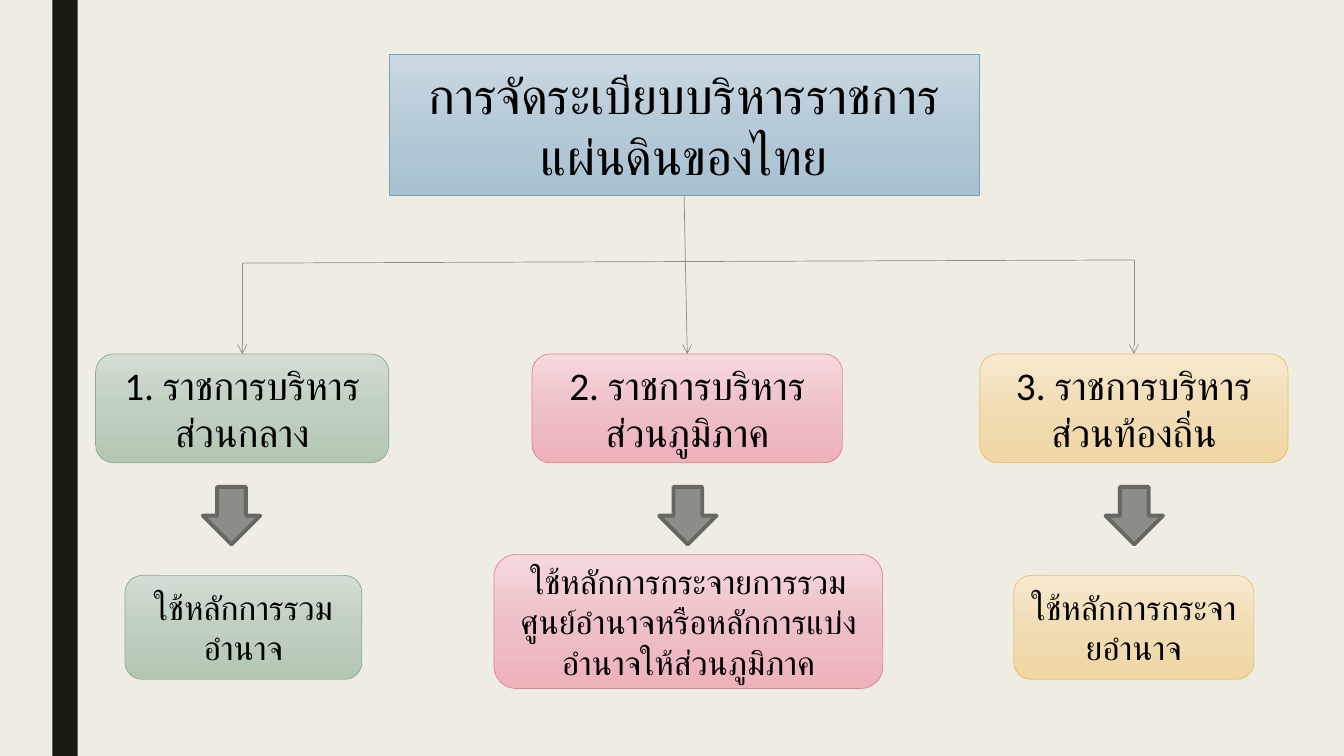
from dataclasses import dataclass

from lxml.etree import SubElement
from copy import deepcopy
from pptx import Presentation
from pptx.dml.color import RGBColor
from pptx.enum.shapes import MSO_CONNECTOR, MSO_SHAPE
from pptx.enum.text import MSO_ANCHOR, MSO_AUTO_SIZE, PP_ALIGN
from pptx.oxml.ns import qn
from pptx.shapes.autoshape import Shape
from pptx.shapes.connector import Connector
from pptx.slide import Slide
from pptx.util import Cm, Pt

CREAM = RGBColor(0xEF, 0xED, 0xE3)
DARK = RGBColor(0x19, 0x1B, 0x0E)
BLACK = RGBColor(0x00, 0x00, 0x00)
GREY = RGBColor(0x8C, 0x8D, 0x86)
DARK_GREY = RGBColor(0x68, 0x68, 0x63)

TOP, BOTTOM = 0, 2  # connection sites
BRANCH_TOP, BRANCH_HEIGHT = 8.92, 2.74
ARROW_TOP, ARROW_SIZE = 12.27, 1.45


@dataclass(frozen=True)
class Palette:
    light: RGBColor
    middle: RGBColor
    deep: RGBColor
    line: RGBColor


@dataclass(frozen=True)
class Box:
    text: str
    left: float
    top: float
    width: float
    height: float
    size: int
    font: str = "Calibri"


@dataclass(frozen=True)
class Branch:
    palette: Palette
    heading: Box
    arrow_left: float
    principle: Box


BLUE = Palette(RGBColor(0xCC, 0xDA, 0xE3), RGBColor(0xB6, 0xCA, 0xD7),
               RGBColor(0xA7, 0xC1, 0xD2), RGBColor(0x77, 0xA2, 0xBB))
GREEN = Palette(RGBColor(0xD3, 0xDD, 0xD3), RGBColor(0xC0, 0xCF, 0xC0),
                RGBColor(0xB4, 0xC7, 0xB5), RGBColor(0x8D, 0xAB, 0x8E))
PINK = Palette(RGBColor(0xF6, 0xD9, 0xDD), RGBColor(0xEF, 0xC0, 0xC7),
               RGBColor(0xEE, 0xB2, 0xBB), RGBColor(0xE2, 0x83, 0x94))
GOLD = Palette(RGBColor(0xF7, 0xE9, 0xD0), RGBColor(0xF1, 0xDC, 0xB4),
               RGBColor(0xF1, 0xD7, 0xA3), RGBColor(0xE6, 0xC0, 0x69))

TITLE = Box("การจัดระเบียบบริหารราชการแผ่นดินของไทย", 9.8, 1.37, 14.88, 3.56, 36, "Roboto")


def heading(text: str, left: float, width: float) -> Box:
    return Box(text, left, BRANCH_TOP, width, BRANCH_HEIGHT, 28)


BRANCHES = [
    Branch(GREEN, heading("1. ราชการบริหารส่วนกลาง", 2.41, 7.39), 5.11,
           Box("ใช้หลักการรวมอำนาจ", 3.15, 14.5, 5.97, 2.62, 24)),
    Branch(PINK, heading("2. ราชการบริหารส่วนภูมิภาค", 13.41, 7.82), 16.61,
           Box("ใช้หลักการกระจายการรวมศูนย์อำนาจหรือหลักการแบ่งอำนาจให้ส่วนภูมิภาค",
               12.45, 13.97, 9.8, 3.38, 24)),
    Branch(GOLD, heading("3. ราชการบริหารส่วนท้องถิ่น", 24.69, 7.77), 27.86,
           Box("ใช้หลักการกระจายอำนาจ", 25.55, 14.5, 6.05, 2.62, 24)),
]


def style_box(shape: Shape, box: Box, palette: Palette) -> None:
    """Give a shape its gradient, outline and centred text."""
    shape.fill.gradient()
    shape.fill.gradient_angle = 270
    first = shape.fill.gradient_stops[0]
    stop_list = shape._element.spPr.find(qn("a:gradFill")).find(qn("a:gsLst"))
    stop_list.insert(1, deepcopy(stop_list[0]))
    colors = (palette.light, palette.middle, palette.deep)
    for stop, position, color in zip(shape.fill.gradient_stops, (0, 0.5, 1), colors):
        stop.position = position
        stop.color.rgb = color
    shape.line.color.rgb = palette.line
    shape.line.width = Pt(0.5)

    frame = shape.text_frame
    frame.word_wrap = True
    frame.auto_size = MSO_AUTO_SIZE.NONE
    frame.vertical_anchor = MSO_ANCHOR.MIDDLE
    frame.text = box.text
    para = frame.paragraphs[0]
    para.alignment = PP_ALIGN.CENTER
    para.font.name = box.font
    para.font.size = Pt(box.size)
    para.font.color.rgb = BLACK


def add_plain(slide: Slide, kind: MSO_SHAPE, left: float, top: float,
              width: float, height: float) -> Shape:
    shape = slide.shapes.add_shape(kind, Cm(left), Cm(top), Cm(width), Cm(height))
    shape.shadow.inherit = False
    return shape


def add_box(slide: Slide, box: Box, palette: Palette) -> Shape:
    shape = add_plain(slide, MSO_SHAPE.ROUNDED_RECTANGLE,
                      box.left, box.top, box.width, box.height)
    style_box(shape, box, palette)
    return shape


def add_title(slide: Slide, box: Box, palette: Palette) -> Shape:
    title = slide.shapes.title
    title.left, title.top = Cm(box.left), Cm(box.top)
    title.width, title.height = Cm(box.width), Cm(box.height)
    geometry = SubElement(title._element.spPr, qn("a:prstGeom"), prst="roundRect")
    SubElement(geometry, qn("a:avLst"))
    style_box(title, box, palette)
    return title


def add_down_arrow(slide: Slide, left: float) -> None:
    arrow = add_plain(slide, MSO_SHAPE.DOWN_ARROW, left, ARROW_TOP, ARROW_SIZE, ARROW_SIZE)
    arrow.fill.solid()
    arrow.fill.fore_color.rgb = GREY
    arrow.line.color.rgb = DARK_GREY
    arrow.line.width = Pt(2.75)


def add_line(slide: Slide, start: tuple[int, int], end: tuple[int, int],
             arrowhead: bool = False) -> Connector:
    line = slide.shapes.add_connector(MSO_CONNECTOR.STRAIGHT, *start, *end)
    line.line.color.rgb = GREY
    line.line.width = Pt(0.5)
    properties = line._element.spPr
    if arrowhead:
        SubElement(properties.find(qn("a:ln")), qn("a:tailEnd"), type="arrow")
    SubElement(properties, qn("a:effectLst"))
    return line


def top_middle(shape: Shape) -> tuple[int, int]:
    return shape.left + shape.width // 2, shape.top


def main() -> None:
    deck = Presentation()
    deck.slide_width, deck.slide_height = Cm(33.87), Cm(19.05)
    page = deck.slides.add_slide(deck.slide_layouts[5])
    page.background.fill.solid()
    page.background.fill.fore_color.rgb = CREAM

    # Side band
    band = add_plain(page, MSO_SHAPE.RECTANGLE, 1.32, 0, 0.64, 19.05)
    band.fill.solid()
    band.fill.fore_color.rgb = DARK
    band.line.fill.background()

    # Title and the three branches
    title = add_title(page, TITLE, BLUE)
    headings = []
    for branch in BRANCHES:
        headings.append(add_box(page, branch.heading, branch.palette))
        add_down_arrow(page, branch.arrow_left)
        add_box(page, branch.principle, branch.palette)

    # Tree lines
    central, regional, local = headings
    left_corner = (top_middle(central)[0], Cm(6.63))
    right_corner = (top_middle(local)[0], Cm(6.55))
    title_bottom = (title.left + title.width // 2, title.top + title.height)
    add_line(page, left_corner, right_corner)
    starts = (left_corner, title_bottom, right_corner)
    for start, target in zip(starts, headings):
        line = add_line(page, start, top_middle(target), arrowhead=True)
        line.end_connect(target, TOP)
        if target is regional:
            line.begin_connect(title, BOTTOM)

    deck.save("out.pptx")


if __name__ == "__main__":
    main()
